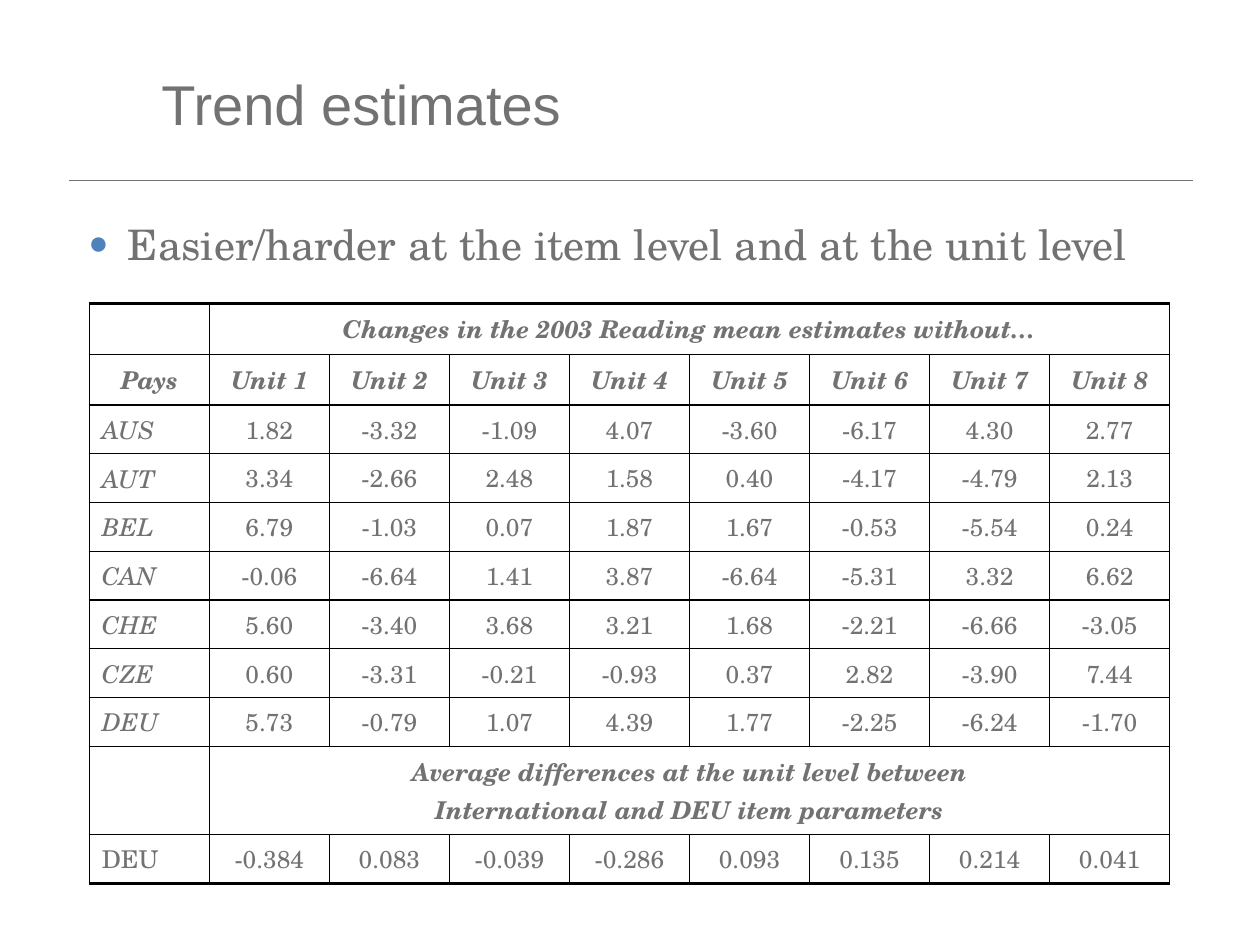
"""Build the trend estimates slide: a title, one bullet and a table of unit effects."""
import pptx
import pptx.dml.color
import pptx.enum.shapes
import pptx.enum.text
import pptx.oxml
import pptx.oxml.ns
import pptx.util

Cm, Pt = pptx.util.Cm, pptx.util.Pt
ALIGN = pptx.enum.text.PP_ALIGN
MIDDLE = pptx.enum.text.MSO_ANCHOR.MIDDLE
COLORS = {"text": "727272", "border": "000000", "bullet": "4F81BD"}
SERIF = "TeX Gyre Schola"
NAMESPACE = pptx.oxml.ns.nsdecls("a")


def write(para, text, align, **formats):
    para.alignment = align
    span = para.add_run()
    span.text = text
    for name, value in formats.items():
        setattr(span.font, name, value)
    span.font.color.rgb = pptx.dml.color.RGBColor.from_string(COLORS["text"])


def set_borders(cell, widths):
    properties = cell._tc.get_or_add_tcPr()
    for index, (side, width) in enumerate(widths.items()):
        properties.insert(index, pptx.oxml.parse_xml(
            f'<a:ln{side} {NAMESPACE} w="{Pt(width)}"><a:solidFill>'
            f'<a:srgbClr val="{COLORS["border"]}"/></a:solidFill></a:ln{side}>'))


deck = pptx.Presentation()
deck.slide_width, deck.slide_height = Cm(25.4), Cm(19.05)
page = deck.slides.add_slide(deck.slide_layouts[1])

rule = page.shapes.add_connector(
    pptx.enum.shapes.MSO_CONNECTOR.STRAIGHT, Cm(1.4), Cm(3.63), Cm(24.05), Cm(3.63))
rule.line.color.rgb = pptx.dml.color.RGBColor.from_string(COLORS["text"])
rule.line.width = Pt(0.5)
rule._element.spPr.append(pptx.oxml.parse_xml(f"<a:effectLst {NAMESPACE}/>"))

title, body = page.shapes.title, page.placeholders[1]
places = [(title, (3, 0.66, 20.6, 2.84)), (body, (1.3, 4.27, 22.8, 1.85))]
for box, place in places:
    box.left, box.top, box.width, box.height = map(Cm, place)
    box.text_frame.auto_size = pptx.enum.text.MSO_AUTO_SIZE.NONE
title.text_frame.vertical_anchor = MIDDLE
write(title.text_frame.paragraphs[0], "Trend estimates", ALIGN.LEFT, size=Pt(32), name="Arial")

item = body.text_frame.paragraphs[0]
item.space_before = Pt(0)
bullet = item._p.get_or_add_pPr()
bullet.set("marL", str(Cm(1.02)))
bullet.set("indent", str(Cm(-0.79)))
for tag in (f'buClr {NAMESPACE}><a:srgbClr val="{COLORS["bullet"]}"/></a:buClr',
            f'buSzPct {NAMESPACE} val="80000"/',
            f'buFont {NAMESPACE} typeface="Arial"/',
            f'buChar {NAMESPACE} char="●"/'):
    bullet.append(pptx.oxml.parse_xml(f"<a:{tag}>"))
write(item, "Easier/harder at the item level and at the unit level", ALIGN.LEFT,
      size=Pt(24), name=SERIF)

rows = [
    ["", "Changes in the 2003 Reading mean estimates without…"],
    ["Pays"] + [f"Unit {number}" for number in range(1, 9)],
    "AUS 1.82 -3.32 -1.09 4.07 -3.60 -6.17 4.30 2.77".split(),
    "AUT 3.34 -2.66 2.48 1.58 0.40 -4.17 -4.79 2.13".split(),
    "BEL 6.79 -1.03 0.07 1.87 1.67 -0.53 -5.54 0.24".split(),
    "CAN -0.06 -6.64 1.41 3.87 -6.64 -5.31 3.32 6.62".split(),
    "CHE 5.60 -3.40 3.68 3.21 1.68 -2.21 -6.66 -3.05".split(),
    "CZE 0.60 -3.31 -0.21 -0.93 0.37 2.82 -3.90 7.44".split(),
    "DEU 5.73 -0.79 1.07 4.39 1.77 -2.25 -6.24 -1.70".split(),
    ["", "Average differences at the unit level between\nInternational and DEU item parameters"],
    "DEU -0.384 0.083 -0.039 -0.286 0.093 0.135 0.214 0.041".split(),
]
heights = [1.02, 1.01] + [0.98] * 7 + [1.78, 0.98]
last = len(rows) - 1
headings = (0, 1, 9)
table = page.shapes.add_table(
    len(rows), 9, Cm(1.8), Cm(6.12), Cm(21.78), Cm(sum(heights))).table
table.first_row = table.horz_banding = False
for column in table.columns:
    column.width = Cm(2.42)

for r, values in enumerate(rows):
    table.rows[r].height = Cm(heights[r])
    if len(values) == 2:
        table.cell(r, 1).merge(table.cell(r, 8))
    for c in range(9):
        cell = table.cell(r, c)
        cell.fill.background()
        cell.vertical_anchor = MIDDLE
        set_borders(cell, {"L": 0.75, "R": 0.75,
                           "T": {0: 2, 2: 1}.get(r, 0.75),
                           "B": {1: 1, last: 2}.get(r, 0.75)})
    for c, value in enumerate(values):
        frame = table.cell(r, c).text_frame
        heading = r in headings
        for index, text in enumerate(value.split("\n") if value else []):
            para = frame.add_paragraph() if index else frame.paragraphs[0]
            write(para, text, ALIGN.CENTER if heading or c else ALIGN.LEFT,
                  size=Pt(14), name=SERIF, bold=heading,
                  italic=heading or (c == 0 and r < last))

deck.save("out.pptx")
